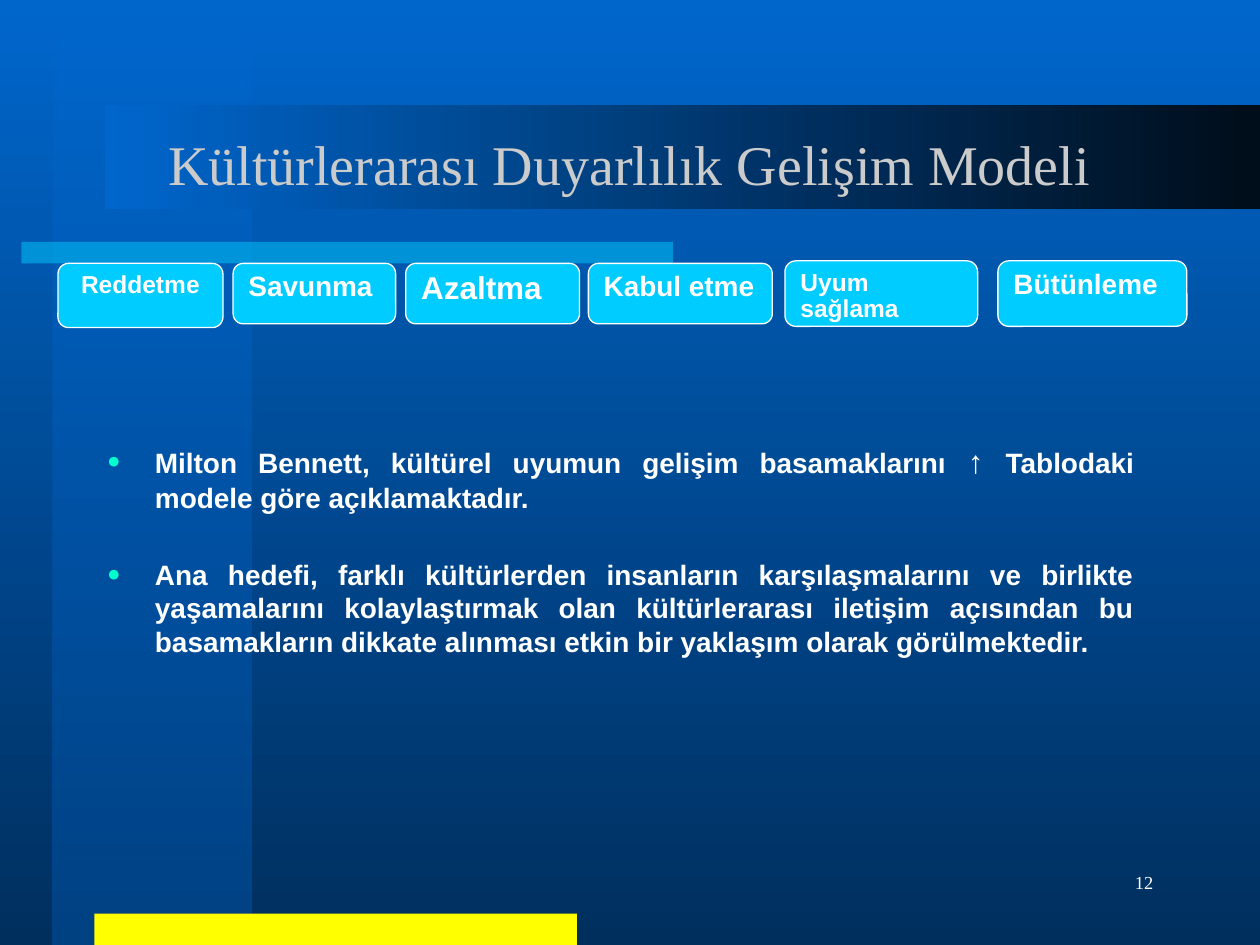
from lxml.etree import SubElement
from pptx import Presentation
from pptx.dml.color import RGBColor
from pptx.enum.shapes import MSO_SHAPE as Shape
from pptx.enum.text import MSO_ANCHOR as Anchor, MSO_AUTO_SIZE as AutoSize, PP_ALIGN as Align
from pptx.oxml.ns import qn
from pptx.util import Inches, Pt

COLORS = {
    "blue": "0066CC", "navy": "002F5E", "stripe": "0053A6", "night": "000D1A",
    "cyan": "00CCFF", "yellow": "FFFF00", "white": "FFFFFF", "title": "CBCBCB",
    "bullet": "00FFCC",
}
RIGHTWARD, DOWNWARD = 0, 270

# label, left, top, width, height, font size, alignment
STAGES = [
    ("Reddetme", 0.46, 2.09, 1.31, 0.51, 14, Align.CENTER),
    ("Savunma", 1.85, 2.09, 1.29, 0.48, 16, Align.LEFT),
    ("Azaltma", 3.22, 2.09, 1.38, 0.48, 18, Align.LEFT),
    ("Kabul etme", 4.67, 2.09, 1.46, 0.48, 16, Align.LEFT),
    ("Uyum sağlama", 6.23, 2.07, 1.53, 0.52, 14, Align.LEFT),
    ("Bütünleme", 7.92, 2.07, 1.5, 0.52, 16, Align.LEFT),
]
# Each point is a list of (text, font size) runs
POINTS = [
    [("Milton Bennett, kültürel uyumun gelişim basamaklarını ", 16), ("↑ ", 18),
     ("Tablodaki modele göre açıklamaktadır.", 16)],
    [("Ana hedefi, farklı kültürlerden insanların karşılaşmalarını ve birlikte "
      "yaşamalarını kolaylaştırmak olan kültürlerarası iletişim açısından bu "
      "basamakların dikkate alınması etkin bir yaklaşım olarak görülmektedir.", 16)],
]


def rgb(name):
    return RGBColor.from_string(COLORS[name])


def place(shape, left, top, width, height):
    shape.left, shape.top = Inches(left), Inches(top)
    shape.width, shape.height = Inches(width), Inches(height)


def bring_to_front(shape):
    shape.element.getparent().append(shape.element)


def style_font(font, name, size, color, bold=False):
    font.name, font.size, font.bold = name, Pt(size), bold
    font.color.rgb = rgb(color)


def fill_gradient(fill, start, end, angle):
    fill.gradient()
    fill.gradient_angle = angle
    for stop, color, position in zip(fill.gradient_stops, (start, end), (0, 1)):
        stop.color.rgb = rgb(color)
        stop.position = position


def make_half_transparent(shape):
    for color in shape.element.spPr.iter(qn("a:srgbClr")):
        SubElement(color, qn("a:alpha"), val="50000")


def add_block(slide, kind, box, color=None):
    block = slide.shapes.add_shape(kind, *map(Inches, box))
    block.shadow.inherit = False
    block.line.fill.background()
    if color:
        block.fill.solid()
        block.fill.fore_color.rgb = rgb(color)
    return block


def add_backdrop(slide):
    fill_gradient(slide.background.fill, "blue", "navy", DOWNWARD)
    stripe = add_block(slide, Shape.RECTANGLE, (0.42, 0, 1.58, 7.5))
    fill_gradient(stripe.fill, "blue", "stripe", DOWNWARD)
    make_half_transparent(stripe)
    make_half_transparent(add_block(slide, Shape.RECTANGLE, (0.17, 1.92, 5.17, 0.17), "cyan"))
    add_block(slide, Shape.RECTANGLE, (0.75, 7.25, 3.83, 0.25), "yellow")
    title_band = add_block(slide, Shape.RECTANGLE, (0.83, 0.83, 9.17, 0.83))
    fill_gradient(title_band.fill, "blue", "night", RIGHTWARD)


def add_page_number(slide, number):
    frame = slide.shapes.add_textbox(*map(Inches, (7.17, 6.75, 2.08, 0.5))).text_frame
    frame.word_wrap = True
    frame.vertical_anchor = Anchor.MIDDLE
    line = frame.paragraphs[0]
    line.text = number
    line.alignment = Align.RIGHT
    style_font(line.font, "Times New Roman", 10.5, "white")


def fill_title(title, text):
    place(title, 0.75, 0.67, 8.5, 1.25)
    bring_to_front(title)
    frame = title.text_frame
    frame.text = text
    frame.auto_size = AutoSize.NONE
    frame.vertical_anchor = Anchor.MIDDLE
    frame.paragraphs[0].alignment = Align.CENTER
    style_font(frame.paragraphs[0].font, "Times New Roman", 32, "title")


def set_bullet(paragraph):
    props = paragraph._p.get_or_add_pPr()
    props.set("marL", str(Inches(0.38)))
    props.set("indent", str(-Inches(0.38)))
    SubElement(SubElement(props, qn("a:buClr")), qn("a:srgbClr"), val=COLORS["bullet"])
    SubElement(props, qn("a:buSzPct"), val="80000")
    SubElement(props, qn("a:buChar"), char="●")


def fill_body(body, points):
    place(body, 0.75, 2.04, 8.35, 3.68)
    bring_to_front(body)
    frame = body.text_frame
    frame.auto_size = AutoSize.NONE
    frame.vertical_anchor = Anchor.TOP
    frame.margin_top = Inches(1.47)  # keeps the list clear of the stage boxes
    for index, runs in enumerate(points):
        point = frame.add_paragraph() if index else frame.paragraphs[0]
        point.alignment = Align.JUSTIFY
        point.space_before = Pt(25 if index else 0)
        set_bullet(point)
        style_font(point.font, "Arial", 16, "white", bold=True)
        for text, size in runs:
            run = point.add_run()
            run.text = text
            run.font.size = Pt(size)


def add_stage(slide, label, left, top, width, height, size, alignment):
    stage = add_block(slide, Shape.ROUNDED_RECTANGLE, (left, top, width, height), "cyan")
    stage.line.color.rgb = rgb("white")
    stage.line.width = Pt(0.75)
    frame = stage.text_frame
    frame.word_wrap = True
    frame.vertical_anchor = Anchor.TOP
    name = frame.paragraphs[0]
    name.text = label
    name.alignment = alignment
    name.line_spacing = 0.9
    name.space_before = Pt(size * 0.2)
    style_font(name.font, "Arial", size, "white", bold=True)


def main():
    deck = Presentation()
    deck.slide_width, deck.slide_height = Inches(10), Inches(7.5)
    slide = deck.slides.add_slide(deck.slide_layouts[1])
    add_backdrop(slide)
    add_page_number(slide, "12")
    fill_title(slide.shapes.title, "Kültürlerarası Duyarlılık Gelişim Modeli")
    fill_body(slide.placeholders[1], POINTS)
    for stage in STAGES:
        add_stage(slide, *stage)
    deck.save("out.pptx")


if __name__ == "__main__":
    main()
